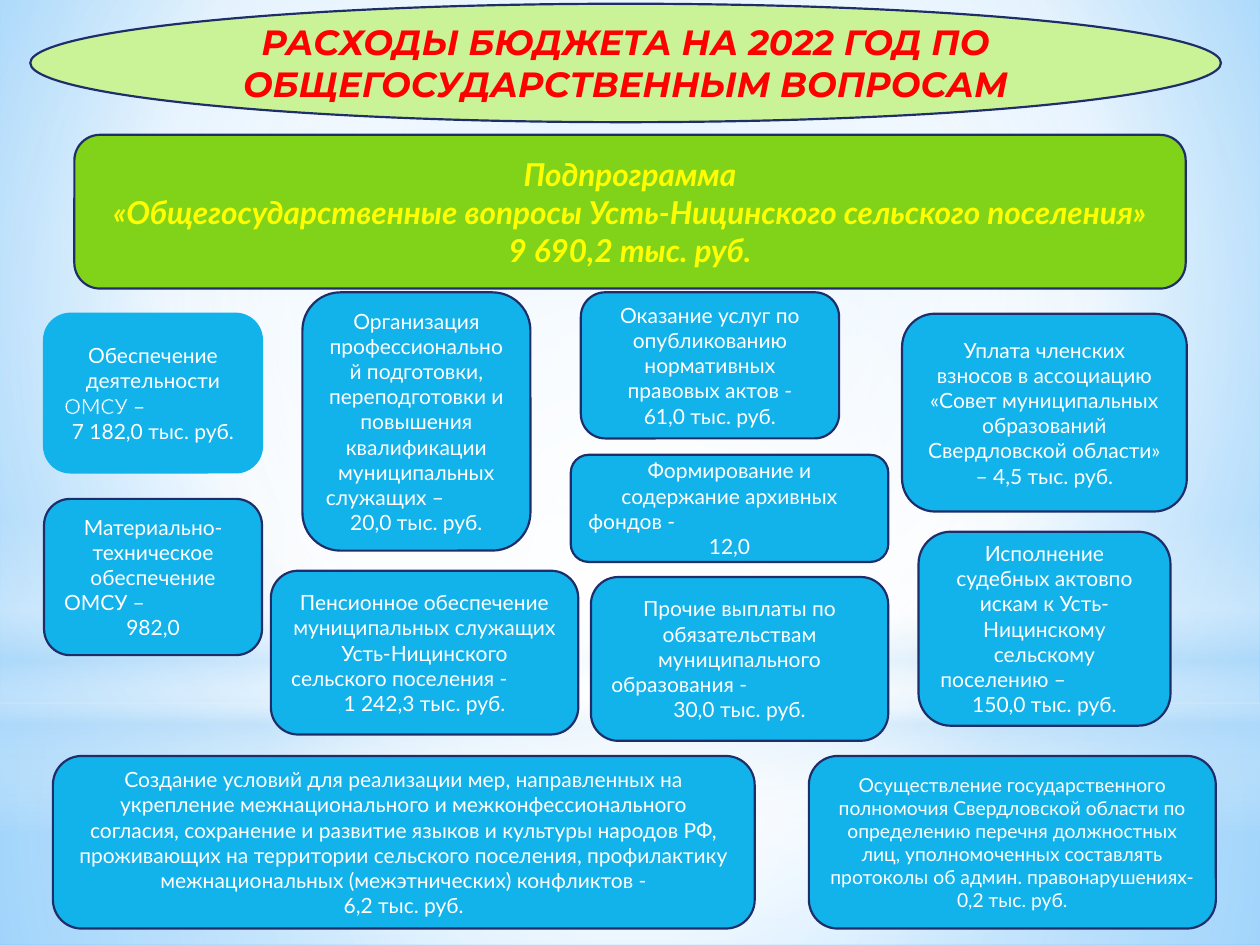
from lxml.etree import SubElement
from pptx import Presentation
from pptx.dml.color import RGBColor
from pptx.enum.shapes import MSO_SHAPE
from pptx.enum.text import MSO_ANCHOR, PP_ALIGN
from pptx.oxml.ns import qn
from pptx.util import Inches, Pt

WIDE, HIGH = 10, 7.5
THEME = {
    "blue": "12B2EB", "navy": "1F2E69", "white": "FFFFFF", "lime": "CAF297",
    "green": "81D31A", "red": "FF0000", "yellow": "FFFF00", "sky": "B4DCFA",
    "glow": "9ED5FF", "deep": "5BB9FF",
    "head": 20, "sub": 18, "body": 12, "small": 11, "edge": 1.25, "thin": 0.75,
    "title": "Montserrat", "text": "Lato",
}
MID = (50, 50, 50, 50)

# Stops are (position, colour, opacity); focus is left, top, right, bottom or None
SKY = [(0, "glow", 100), (60, "white", 100), (100, "deep", 100)]
LAYERS = [
    ("RECTANGLE", (0, 5.58, WIDE, 1.92), MID,
     [(0, "white", 91), (37, "white", 76), (100, "sky", 79)]),
    ("RECTANGLE", (0, 0, WIDE, 5.58), MID,
     [(0, "white", 89), (48, "white", 62), (100, "sky", 79)]),
    ("RECTANGLE", (0, 4.12, WIDE, 2.5), None,
     [(0, "white", 0), (29, "white", 30), (45, "sky", 40),
      (55, "white", 26), (65, "sky", 60), (100, "white", 0)]),
    ("OVAL", (0, 1.75, WIDE, 5.58), MID, [(0, "white", 100), (56, "white", 0)]),
]

TITLE = "РАСХОДЫ БЮДЖЕТА НА 2022 ГОД ПО ОБЩЕГОСУДАРСТВЕННЫМ ВОПРОСАМ"
PROGRAM = ["Подпрограмма",
           "«Общегосударственные вопросы Усть-Ницинского сельского поселения»",
           "9 690,2 тыс. руб."]

# Place, centred text, left-aligned ending of that text, amount
ITEMS = [
    ((0.35, 3.96, 1.73, 1.24), "Материально-техническое обеспечение", "ОМСУ –", "982,0"),
    ((2.4, 2.32, 1.81, 2.05),
     "Организация профессиональной подготовки, переподготовки и повышения "
     "квалификации муниципальных", "служащих –", "20,0 тыс. руб."),
    ((2.15, 4.53, 2.44, 1.3),
     "Пенсионное обеспечение муниципальных служащих Усть-Ницинского",
     "сельского поселения -", "1 242,3 тыс. руб."),
    ((4.61, 2.32, 2.05, 1.16),
     "Оказание услуг по опубликованию нормативных правовых актов -", "", "61,0 тыс. руб."),
    ((7.29, 4.22, 2, 1.54),
     "Исполнение судебных актовпо искам к Усть-Ницинскому сельскому",
     "поселению –", "150,0 тыс. руб."),
    ((7.16, 2.49, 2.26, 1.57),
     "Уплата членских взносов в ассоциацию «Совет муниципальных образований "
     "Свердловской области» – 4,5 тыс. руб.", "", ""),
    ((4.53, 3.61, 2.52, 0.85), "Формирование и содержание архивных", "фондов -", "12,0"),
    ((4.69, 4.58, 2.36, 1.3), "Прочие выплаты по обязательствам муниципального",
     "образования -", "30,0 тыс. руб."),
    ((0.42, 6, 5.57, 1.37),
     "Создание условий для реализации мер, направленных на укрепление "
     "межнационального и межконфессионального согласия, сохранение и развитие "
     "языков и культуры народов РФ, проживающих на территории сельского "
     "поселения, профилактику межнациональных (межэтнических) конфликтов -",
     "", "6,2 тыс. руб."),
]
STAFF = ((0.35, 2.49, 1.73, 1.26), "Обеспечение деятельности", "ОМСУ", "7 182,0 тыс. руб.")
POWERS = ((6.42, 6, 3.23, 1.37),
          "Осуществление государственного полномочия Свердловской области по "
          "определению перечня должностных лиц, уполномоченных составлять "
          "протоколы об админ. правонарушениях- 0,2 тыс. руб.", "", "")


def tint(name):
    return RGBColor.from_string(THEME[name])


def blend(props, stops, focus):
    """Replace the solid fill in props with a gradient."""
    grad = props.makeelement(qn("a:gradFill"), {"rotWithShape": "1"})
    marks = SubElement(grad, qn("a:gsLst"))
    for pos, name, alpha in stops:
        mark = SubElement(marks, qn("a:gs"), pos=str(pos * 1000))
        color = SubElement(mark, qn("a:srgbClr"), val=THEME[name])
        if alpha < 100:
            SubElement(color, qn("a:alpha"), val=str(alpha * 1000))
    if focus:
        ring = SubElement(grad, qn("a:path"), {"path": "circle"})
        sides = {k: str(v * 1000) for k, v in zip("ltrb", focus)}
        SubElement(ring, qn("a:fillToRect"), sides)
    else:
        SubElement(grad, qn("a:lin"), ang="5400000", scaled="0")
    props.replace(props.find(qn("a:solidFill")), grad)


def draw(slide, kind, place, fill, line=None):
    shape = slide.shapes.add_shape(getattr(MSO_SHAPE, kind), *map(Inches, place))
    shape.shadow.inherit = False
    shape.fill.solid()
    shape.fill.fore_color.rgb = tint(fill)
    if line:
        shape.line.color.rgb = tint(line)
        shape.line.width = Pt(THEME["edge"])
    else:
        shape.line.fill.background()
    return shape


def write(shape, lines, size, color="white", face="text", strong=None):
    """Fill the shape with (text, alignment) lines."""
    frame = shape.text_frame
    frame.word_wrap = True
    frame.vertical_anchor = MSO_ANCHOR.MIDDLE
    for i, (text, align) in enumerate(lines):
        para = frame.add_paragraph() if i else frame.paragraphs[0]
        para.text, para.alignment = text, align
        font = para.font
        font.name, font.size = THEME[face], Pt(THEME[size])
        font.bold = font.italic = strong
        font.color.rgb = tint(color)


def card(slide, item, size="body", line="navy"):
    place, text, tail, amount = item
    shape = draw(slide, "ROUNDED_RECTANGLE", place, "blue", line)
    lines = [(text, PP_ALIGN.CENTER), (tail, PP_ALIGN.LEFT), (amount, PP_ALIGN.CENTER)]
    write(shape, [pair for pair in lines if pair[0]], size)
    return shape


def main():
    deck = Presentation()
    deck.slide_width, deck.slide_height = Inches(WIDE), Inches(HIGH)
    slide = deck.slides.add_slide(deck.slide_layouts[6])

    slide.background.fill.solid()
    slide.background.fill.fore_color.rgb = tint("white")
    blend(slide.element.find(".//" + qn("p:bgPr")), SKY, (20, 10, 20, 60))
    for kind, place, focus, stops in LAYERS:
        blend(draw(slide, kind, place, "white").element.spPr, stops, focus)

    title = draw(slide, "OVAL", (0.24, 0.03, 9.45, 0.94), "lime", "navy")
    write(title, [(TITLE, PP_ALIGN.CENTER)], "head", "red", "title", True)
    program = draw(slide, "ROUNDED_RECTANGLE", (0.59, 1.07, 8.82, 1.22), "green", "navy")
    write(program, [(text, PP_ALIGN.CENTER) for text in PROGRAM], "sub", "yellow", strong=True)

    staff = card(slide, STAFF, line="blue")
    label = staff.text_frame.paragraphs[1]
    props = label.runs[0].font._element
    edge = SubElement(props, qn("a:ln"), w=str(Pt(THEME["thin"])))
    SubElement(SubElement(edge, qn("a:solidFill")), qn("a:srgbClr"), val=THEME["blue"])
    label.add_run().text = " –"

    for item in ITEMS:
        card(slide, item)
    card(slide, POWERS, "small")
    deck.save("out.pptx")


if __name__ == "__main__":
    main()
